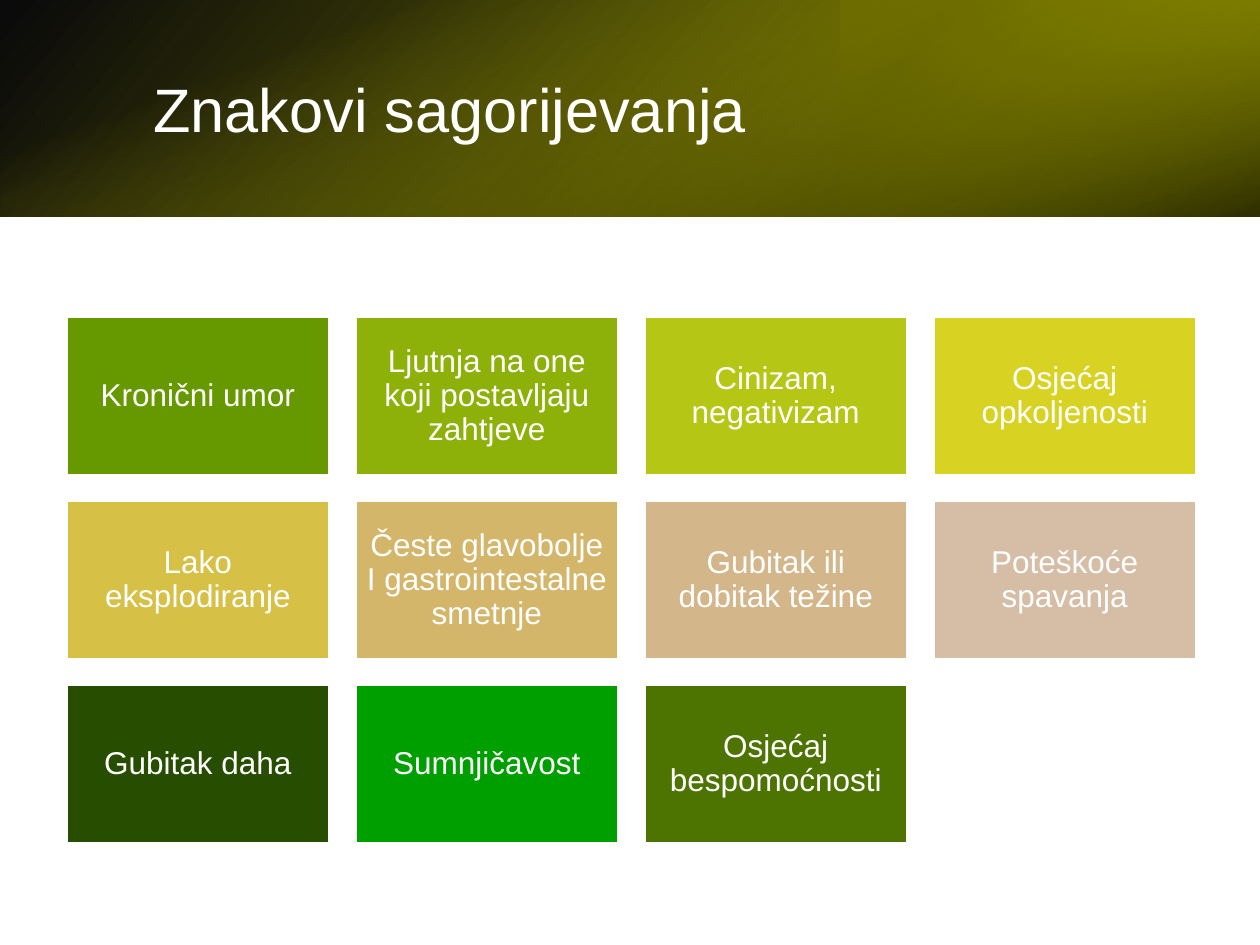
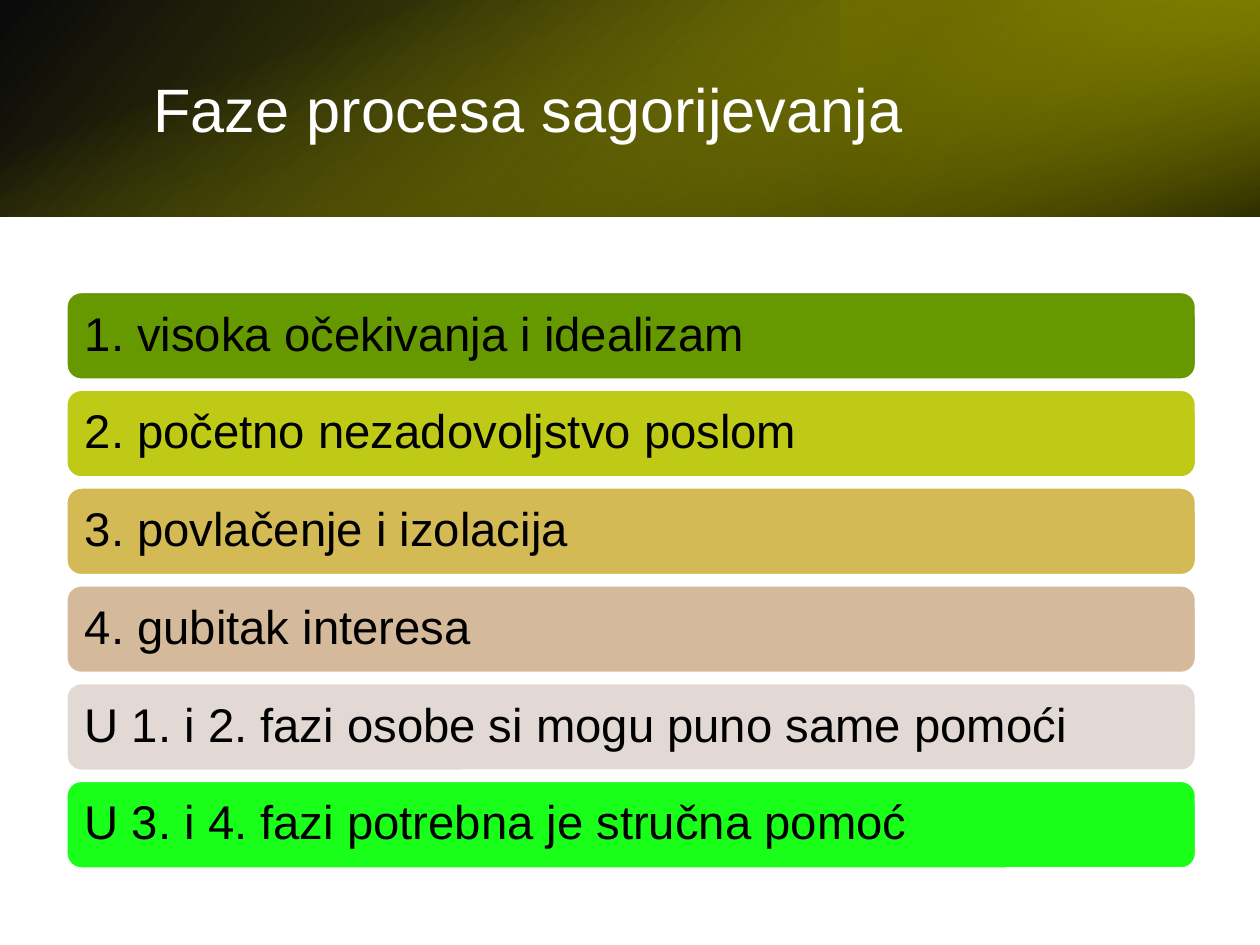
"""Builds two slides on burnout: a grid of signs and a stack of phases."""
from lxml.etree import SubElement
from pptx import Presentation
from pptx.dml.color import RGBColor
from pptx.enum.shapes import MSO_SHAPE
from pptx.enum.text import MSO_ANCHOR, PP_ALIGN
from pptx.oxml.ns import qn
from pptx.util import Inches, Pt

SIGNS_TITLE = "Znakovi sagorijevanja"
SIGNS = [
    ("Kronični umor", "669900"),
    ("Ljutnja na one koji postavljaju zahtjeve", "8DB108"),
    ("Cinizam, negativizam", "B6C614"),
    ("Osjećaj opkoljenosti", "D8D322"),
    ("Lako eksplodiranje", "D6C045"),
    ("Česte glavobolje I gastrointestalne smetnje", "D3B669"),
    ("Gubitak ili dobitak težine", "D3B689"),
    ("Poteškoće spavanja", "D6BDA6"),
    ("Gubitak daha", "264D00"),
    ("Sumnjičavost", "009F00"),
    ("Osjećaj bespomoćnosti", "4D7300"),
]
PHASES_TITLE = "Faze procesa sagorijevanja"
PHASES = [
    ("1. visoka očekivanja i idealizam", "669900"),
    ("2. početno nezadovoljstvo poslom", "BECA16"),
    ("3. povlačenje i izolacija", "D4BA54"),
    ("4. gubitak interesa", "D4BA9B"),
    ("U 1. i 2. fazi osobe si mogu puno same pomoći", "E2D8D4"),
    ("U 3. i 4. fazi potrebna je stručna pomoć", "1AFF1A"),
]
COLORS = {"white": "FFFFFF", "black": "000000", "olive": "999900",
          "dark_olive": "666600", "lime": "CCCC00"}
FONT = "Arial"

BAND = [
    dict(box=(0, 0, 10, 1.72), flip=True, angle=140,
         stops=[(0, "black", 96), (100, "olive", 100)]),
    dict(box=(6.67, 0, 3.33, 1.72), flip=True, rotation=180, angle=320,
         stops=[(19, "dark_olive", 68), (100, "lime", 79)]),
    dict(box=(4.14, -4.14, 1.72, 10), rotation=90, angle=340,
         stops=[(23, "lime", 0), (99, "black", 74)]),
]
LEFT, WIDTH = 0.53, 8.96
COLUMNS, TILE_W, TILE_H, TILE_TOP, TILE_PITCH = 4, 2.08, 1.25, 2.52, 1.46
BAR_H, BAR_TOP, LAST_BAR_TOP = 0.69, 2.32, 6.2


def write(sp, text, size, color="white", align=PP_ALIGN.LEFT, inset=0.1, spacing=None):
    tf = sp.text_frame
    tf.word_wrap = True
    tf.vertical_anchor = MSO_ANCHOR.MIDDLE
    tf.margin_left = tf.margin_right = Inches(inset)
    tf.margin_top = tf.margin_bottom = Inches(min(inset, 0.1))
    p = tf.paragraphs[0]
    p.alignment = align
    p.line_spacing = spacing
    r = p.add_run()
    r.text = text
    r.font.name, r.font.size = FONT, Pt(size)
    r.font.color.rgb = RGBColor.from_string(COLORS[color])


def add_box(s, kind, box):
    sp = s.shapes.add_shape(kind, *map(Inches, box))
    sp.shadow.inherit = False
    return sp


def add_card(s, kind, box, fill):
    sp = add_box(s, kind, box)
    sp.fill.solid()
    sp.fill.fore_color.rgb = RGBColor.from_string(fill)
    sp.line.color.rgb = RGBColor.from_string(COLORS["white"])
    sp.line.width = Pt(1)
    return sp


def add_gradient(s, box, stops, angle, rotation=0, flip=False):
    sp = add_box(s, MSO_SHAPE.RECTANGLE, box)
    sp.rotation = rotation
    sp.line.fill.background()
    sp.fill.gradient()
    spPr = sp.fill._xPr
    if flip:
        spPr.find(qn("a:xfrm")).set("flipH", "1")
    grad = spPr.find(qn("a:gradFill"))
    for child in list(grad):
        grad.remove(child)
    grad.set("rotWithShape", "1")
    gs_list = SubElement(grad, qn("a:gsLst"))
    for position, color, alpha in stops:
        gs = SubElement(gs_list, qn("a:gs"), pos=str(position * 1000))
        clr = SubElement(gs, qn("a:srgbClr"), val=COLORS[color])
        SubElement(clr, qn("a:alpha"), val=str(alpha * 1000))
    SubElement(grad, qn("a:lin"), ang=str(angle * 60000), scaled="0")


def add_slide(prs, title):
    s = prs.slides.add_slide(prs.slide_layouts[6])
    for layer in BAND:
        add_gradient(s, **layer)
    sp = s.shapes.add_textbox(*map(Inches, (1.12, 0.38, 8.24, 0.96)))
    write(sp, title, 35)
    return s


def add_signs(s):
    pitch = (WIDTH - TILE_W) / (COLUMNS - 1)
    for i, (text, fill) in enumerate(SIGNS):
        row, col = divmod(i, COLUMNS)
        box = (LEFT + col * pitch, TILE_TOP + row * TILE_PITCH, TILE_W, TILE_H)
        sp = add_card(s, MSO_SHAPE.RECTANGLE, box, fill)
        write(sp, text, 18, align=PP_ALIGN.CENTER, inset=0.07, spacing=0.9)


def add_phases(s):
    pitch = (LAST_BAR_TOP - BAR_TOP) / (len(PHASES) - 1)
    for i, (text, fill) in enumerate(PHASES):
        box = (LEFT, BAR_TOP + i * pitch, WIDTH, BAR_H)
        sp = add_card(s, MSO_SHAPE.ROUNDED_RECTANGLE, box, fill)
        write(sp, text, 27, color="black", inset=0.11, spacing=0.9)


def main():
    prs = Presentation()
    prs.slide_width, prs.slide_height = Inches(10), Inches(7.5)
    add_signs(add_slide(prs, SIGNS_TITLE))
    add_phases(add_slide(prs, PHASES_TITLE))
    prs.save("out.pptx")


if __name__ == "__main__":
    main()
